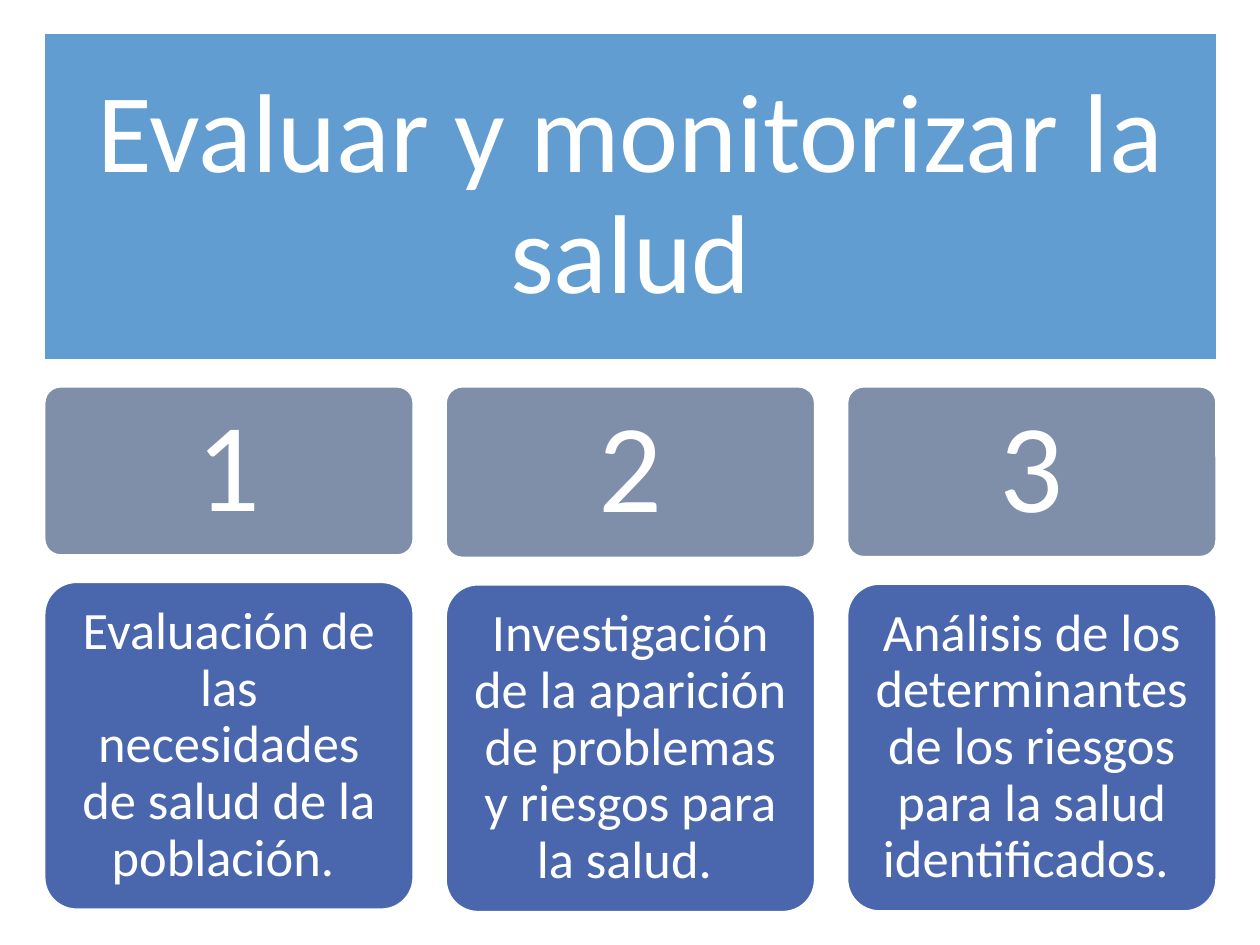
"""Build a slide with a title panel above three numbered columns."""
from lxml import etree
from pptx import Presentation
from pptx.dml.color import RGBColor
from pptx.enum import shapes, text
from pptx.oxml.ns import qn
from pptx.util import Pt

COLORS = {"title": "629DD1", "number": "7F8FA9", "detail": "4A66AC", "white": "FFFFFF"}
FONT = "Calibri"
CORNER = 0.1
GAP = 14.5
DETAIL_HEIGHT = 187.9
COLUMNS = [
    ("1", "Evaluación de las necesidades de salud de la población. ", 97.2),
    ("2", "Investigación de la aparición de problemas y riesgos para la salud. ", 98.6),
    ("3", "Análisis de los determinantes de los riesgos para la salud identificados. ", 98.2),
]


def rgb(name):
    """Return the named colour."""
    return RGBColor.from_string(COLORS[name])


def style_panel(sp, color, wording, size, inset):
    """Fill and outline a panel and set its centred text."""
    sp.fill.solid()
    sp.fill.fore_color.rgb = rgb(color)
    sp.line.color.rgb = rgb("white")
    sp.line.width = Pt(2)
    tf = sp.text_frame
    tf.text = wording
    tf.word_wrap = True
    tf.auto_size = text.MSO_AUTO_SIZE.NONE
    tf.vertical_anchor = text.MSO_ANCHOR.MIDDLE
    tf.margin_left = tf.margin_right = tf.margin_top = tf.margin_bottom = Pt(inset)
    p = tf.paragraphs[0]
    p.alignment = text.PP_ALIGN.CENTER
    p.line_spacing = 0.9
    font = p.runs[0].font
    font.name = FONT
    font.size = Pt(size)
    font.color.rgb = rgb("white")


def add_title(slide, x, y, w, h):
    """Turn the title placeholder into a rounded panel in the given box."""
    sp = slide.shapes.title
    sp.left, sp.top, sp.width, sp.height = Pt(x), Pt(y), Pt(w), Pt(h)
    geom = etree.SubElement(sp.element.spPr, qn("a:prstGeom"), prst="roundRect")
    guides = etree.SubElement(geom, qn("a:avLst"))
    etree.SubElement(guides, qn("a:gd"), name="adj", fmla=f"val {int(CORNER * 100000)}")
    style_panel(sp, "title", "Evaluar y monitorizar la salud", 64, 19.2)


def add_panel(slide, x, y, w, h, color, wording, size, inset):
    """Add a rounded panel in the given box."""
    sp = slide.shapes.add_shape(
        shapes.MSO_SHAPE.ROUNDED_RECTANGLE, Pt(x), Pt(y), Pt(w), Pt(h))
    sp.adjustments[0] = CORNER
    sp.shadow.inherit = False
    style_panel(sp, color, wording, size, inset)


def add_columns(slide, x, y, w, gap):
    """Lay out the numbered columns evenly across the given width."""
    width = (w - gap * (len(COLUMNS) - 1)) / len(COLUMNS)
    for i, (number, detail, height) in enumerate(COLUMNS):
        left = x + i * (width + gap)
        add_panel(slide, left, y, width, height, "number", number, 72, 21.6)
        add_panel(slide, left, y + height + GAP, width, DETAIL_HEIGHT,
                  "detail", detail, 30, 9)


def main():
    """Build and save the slide."""
    prs = Presentation()
    prs.slide_width, prs.slide_height = Pt(720), Pt(540)
    slide = prs.slides.add_slide(prs.slide_layouts[5])
    add_title(slide, 24.5, 18.2, 671.5, 187.9)
    add_columns(slide, 25, 220.5, 670.5, 17.7)
    prs.save("out.pptx")


if __name__ == "__main__":
    main()
